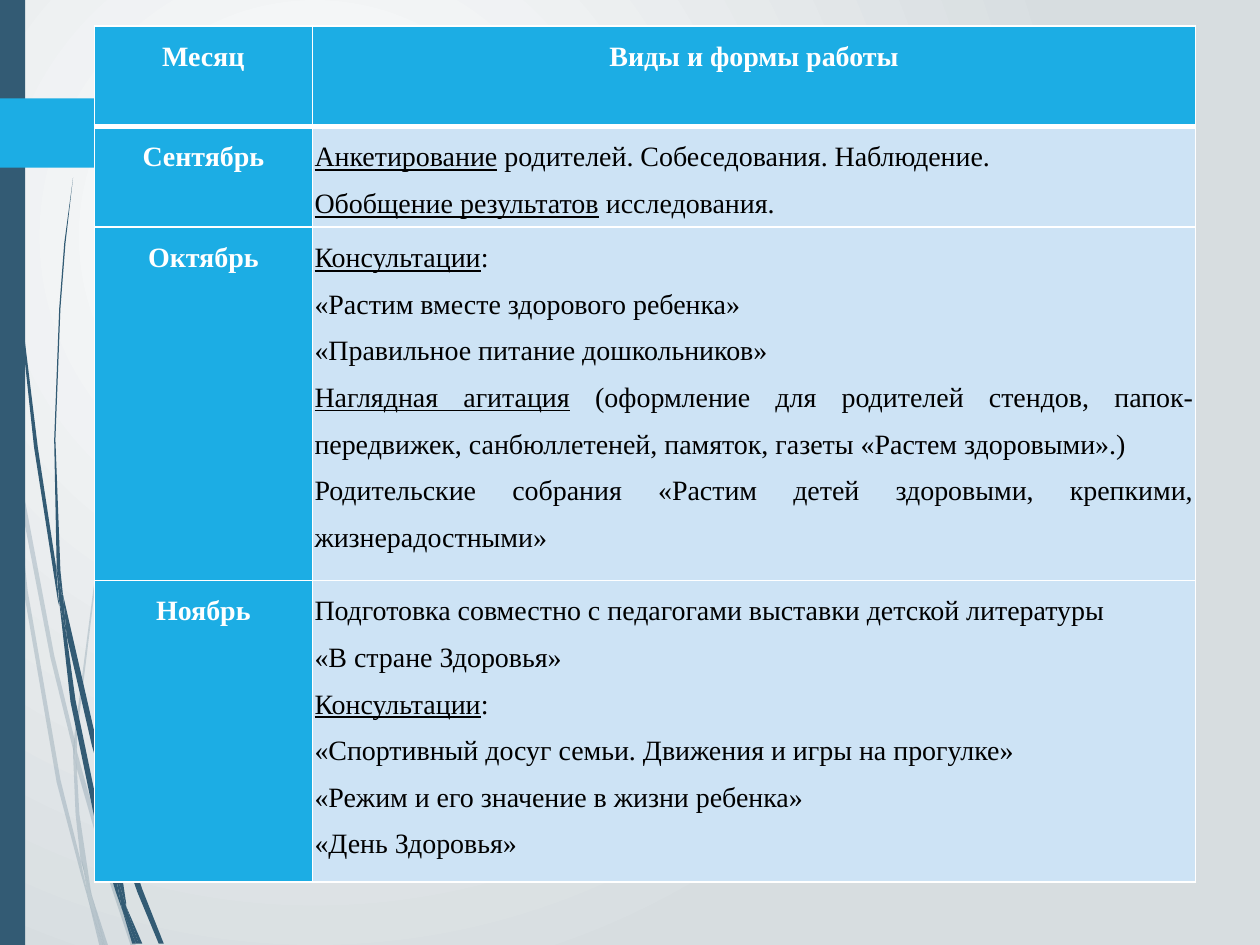
from dataclasses import dataclass

from lxml import etree
from pptx import Presentation
from pptx.dml import color
from pptx.enum import shapes, text
from pptx.oxml import ns
from pptx.util import Cm, Pt


@dataclass(frozen=True)
class Theme:
    navy: str = "335B74"
    blue: str = "1CADE4"
    pale: str = "CDE3F5"
    white: str = "FFFFFF"
    grey: str = "D7DDE0"
    black: str = "000000"
    face: str = "Times New Roman"
    size: int = 16


THEME = Theme()
UNIT = 0.0254

LIGHT = [
    [(8, 350), (6, 322), (0, 282), (0, 299), (7, 344)],
    [(40, 522), (59, 599), (59, 586), (43, 520), (10, 345), (12, 376)],
    [(64, 607), (61, 596), (61, 610), (85, 694), (104, 751), (108, 751), (88, 692)],
    [(83, 751), (86, 751), (73, 711)],
    [(64, 683), (48, 619), (22, 469), (12, 376), (8, 350), (19, 470), (45, 621),
     (64, 693), (70, 714), (69, 707)],
    [(58, 599), (60, 646), (64, 683), (67, 692), (73, 711), (72, 706), (63, 646),
     (61, 610), (61, 608)],
    [(61, 584), (76, 462), (111, 349), (159, 245), (187, 198), (201, 175), (217, 154),
     (217, 153), (201, 175), (186, 197), (158, 244), (110, 348), (75, 461), (59, 584),
     (59, 586), (61, 596)],
    [(70, 714), (79, 751), (82, 751)],
    [(61, 608), (61, 610), (61, 596), (59, 586), (58, 599)],
    [(67, 692), (65, 683), (69, 707), (70, 714), (82, 751), (83, 751), (73, 711)],
]
DARK = [
    [(5, 110), (14, 233), (27, 355), (46, 477), (47, 481), (45, 457), (45, 453),
     (30, 355), (15, 232), (6, 109), (4, 48), (3, 0), (2, 0), (3, 48)],
    [(73, 592), (88, 645), (88, 633), (88, 631), (77, 590), (50, 472), (53, 505)],
    [(94, 649), (91, 641), (91, 656), (109, 708), (126, 749), (130, 749), (113, 706)],
    [(91, 691), (81, 657), (60, 556), (53, 505), (47, 477), (56, 557), (77, 659),
     (92, 708), (97, 722), (96, 717)],
    [(50, 472), (48, 453), (44, 349), (48, 245), (52, 193), (58, 141), (51, 193),
     (47, 245), (43, 349), (45, 449), (49, 472)],
    [(110, 749), (113, 749), (100, 719)],
    [(47, 477), (53, 505), (50, 472), (49, 472), (45, 449), (45, 453)],
    [(91, 633), (103, 552), (131, 476), (169, 406), (191, 374), (203, 359), (216, 344),
     (215, 344), (203, 358), (191, 373), (168, 405), (129, 474), (101, 551), (88, 631),
     (91, 641)],
    [(97, 722), (105, 749), (108, 749)],
    [(88, 645), (91, 691), (96, 706), (100, 719), (100, 716), (91, 656), (90, 651)],
    [(88, 645), (90, 651), (91, 656), (91, 641), (88, 631), (88, 633)],
    [(96, 706), (91, 691), (96, 717), (97, 722), (108, 749), (110, 749), (100, 719)],
]
TAG = [(0, 78), (121, 78), (124, 79), (149, 104), (149, 107), (124, 132), (121, 133),
       (0, 133)]

HEAD = ["Месяц", "Виды и формы работы"]
MONTHS = [
    ("Сентябрь", [
        "*Анкетирование* родителей. Собеседования. Наблюдение.",
        "*Обобщение результатов* исследования.",
    ]),
    ("Октябрь", [
        "*Консультации*:",
        "«Растим вместе здорового ребенка»",
        "«Правильное питание дошкольников»",
        "*Наглядная агитация* (оформление для родителей стендов, "
        "папок-передвижек, санбюллетеней, памяток, газеты "
        "«Растем здоровыми».)",
        "Родительские собрания «Растим детей здоровыми, крепкими, "
        "жизнерадостными»",
    ]),
    ("Ноябрь", [
        "Подготовка совместно с педагогами выставки детской литературы",
        "«В стране Здоровья»",
        "*Консультации*:",
        "«Спортивный досуг семьи. Движения и игры на прогулке»",
        "«Режим и его значение в жизни ребенка»",
        "«День Здоровья»",
    ]),
]


def rgb(tone):
    return color.RGBColor.from_string(tone)


def add_node(parent, tag, **attrs):
    return etree.SubElement(parent, ns.qn(tag), attrs)


def set_ground(slide):
    fill = slide.background.fill
    fill.gradient()
    for stop, tone, place in zip(fill.gradient_stops, (THEME.white, THEME.grey), (0, 1)):
        stop.color.rgb = rgb(tone)
        stop.position = place
    line = slide.background._cSld.find(".//" + ns.qn("a:lin"))
    grad = line.getparent()
    grad.remove(line)
    ring = add_node(grad, "a:path", path="circle")
    add_node(ring, "a:fillToRect", l="50000", t="50000", r="100000", b="100000")


def paint(shape, tone, alpha=None):
    shape.shadow.inherit = False
    shape.fill.solid()
    shape.fill.fore_color.rgb = rgb(tone)
    shape.line.fill.background()
    if alpha:
        node = shape._element.spPr.find(".//" + ns.qn("a:srgbClr"))
        add_node(node, "a:alpha", val=str(alpha * 1000))


def add_bar(slide, left, top, width, height, tone):
    kind = shapes.MSO_SHAPE.RECTANGLE
    paint(slide.shapes.add_shape(kind, Cm(left), Cm(top), Cm(width), Cm(height)), tone)


def add_form(owner, points, tone, alpha=None):
    edge = [(Cm(x * UNIT), Cm(y * UNIT)) for x, y in points]
    pen = owner.shapes.build_freeform(*edge[0])
    pen.add_line_segments(edge[1:])
    paint(pen.convert_to_shape(), tone, alpha)


def add_wisp(slide, forms, alpha=None):
    group = slide.shapes.add_group_shape()
    for points in forms:
        add_form(group, points, THEME.navy, alpha)


def add_edge(cell, side, width):
    line = add_node(cell._tc.get_or_add_tcPr(), "a:ln" + side, w=str(Pt(width)))
    add_node(add_node(line, "a:solidFill"), "a:srgbClr", val=THEME.white)


def fill_cell(cell, lines, tone, ink, bold, align):
    cell.margin_left = cell.margin_right = Cm(0.04)
    cell.margin_top = cell.margin_bottom = 0
    cell.fill.solid()
    cell.fill.fore_color.rgb = rgb(tone)
    frame = cell.text_frame
    for i, line in enumerate(lines):
        para = frame.add_paragraph() if i else frame.paragraphs[0]
        para.alignment = align
        para.line_spacing = 1.5
        font = para.font
        font.name, font.size, font.bold = THEME.face, Pt(THEME.size), bold
        font.color.rgb = rgb(ink)
        for j, part in enumerate(line.split("*")):
            if part:
                run = para.add_run()
                run.text = part
                if j % 2:
                    run.font.underline = True


def add_plan(slide):
    rows = [(HEAD[0], [HEAD[1]])] + MONTHS
    table = slide.shapes.add_table(len(rows), 2, Cm(1.9), Cm(0.52), Cm(22.2), Cm(17.26)).table
    for col, width in zip(table.columns, (4.4, 17.8)):
        col.width = Cm(width)
    for row, height in zip(table.rows, (2.03, 2.03, 7.12, 6.08)):
        row.height = Cm(height)
    for i, (month, work) in enumerate(rows):
        for j, lines in enumerate(([month], work)):
            cell = table.cell(i, j)
            for side in "LRTB":
                thick = (i, side) in ((0, "B"), (1, "T"))
                add_edge(cell, side, 3 if thick else 1)
            if i and j:
                fill_cell(cell, lines, THEME.pale, THEME.black, False, text.PP_ALIGN.JUSTIFY)
            else:
                fill_cell(cell, lines, THEME.blue, THEME.white, True, text.PP_ALIGN.CENTER)


def main():
    deck = Presentation()
    deck.slide_width, deck.slide_height = Cm(25.4), Cm(19.05)
    slide = deck.slides.add_slide(deck.slide_layouts[6])
    set_ground(slide)
    add_wisp(slide, LIGHT, 20)
    add_wisp(slide, DARK)
    add_bar(slide, 0, 0, 0.51, 19.05, THEME.navy)
    add_form(slide, TAG, THEME.blue)
    add_plan(slide)
    deck.save("out.pptx")


if __name__ == "__main__":
    main()
